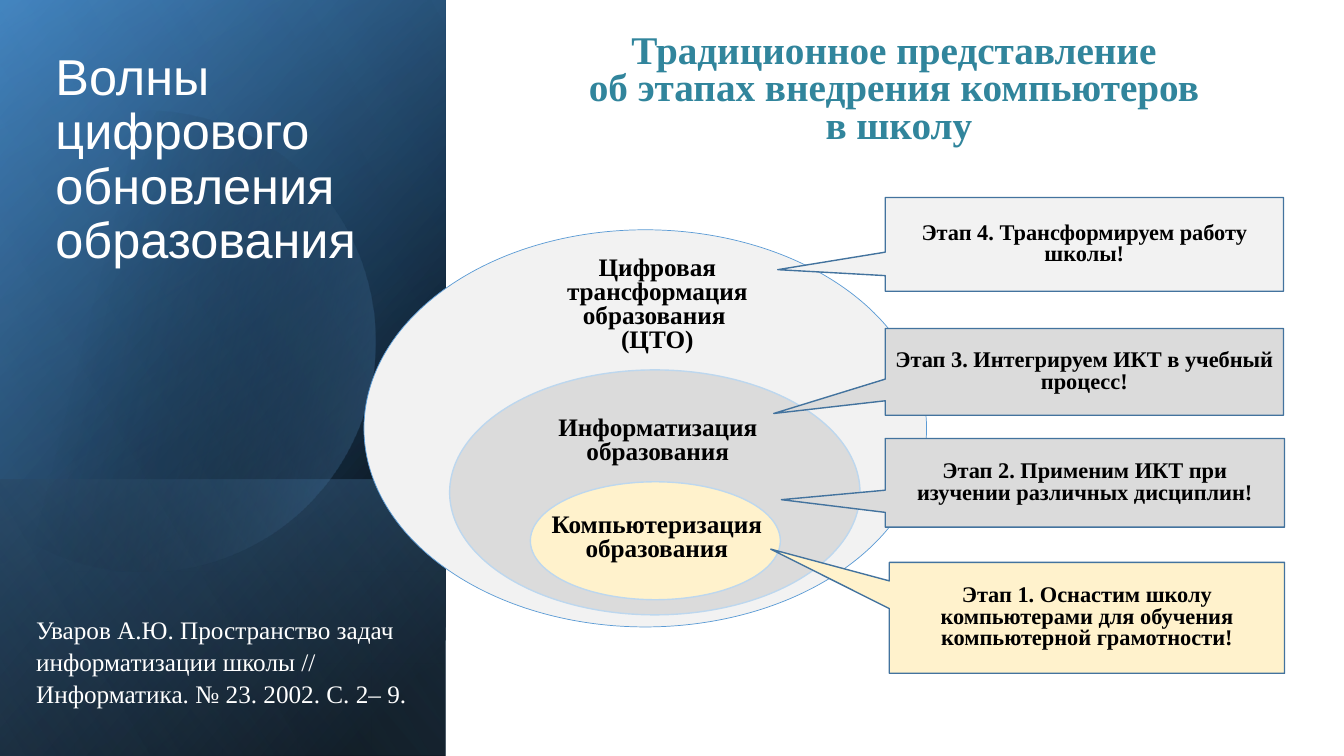
from lxml.etree import SubElement
from pptx import Presentation
from pptx.dml.color import RGBColor
from pptx.enum.shapes import MSO_SHAPE
from pptx.enum.text import MSO_ANCHOR, MSO_AUTO_SIZE, PP_ALIGN
from pptx.oxml.ns import qn
from pptx.util import Inches, Pt

WHITE = RGBColor(0xFF, 0xFF, 0xFF)
BLACK = RGBColor(0, 0, 0)
TEAL = RGBColor(0x31, 0x85, 0x9C)
LIGHT = RGBColor(0xF2, 0xF2, 0xF2)
GREY = RGBColor(0xDB, 0xDB, 0xDB)
CREAM = RGBColor(0xFF, 0xF2, 0xCC)
DEEP_BLUE = RGBColor(0x2E, 0x75, 0xB6)
BLUE = RGBColor(0x5B, 0x9B, 0xD5)
SOFT_BLUE = RGBColor(0x9D, 0xC3, 0xE6)
PALE_BLUE = RGBColor(0xBD, 0xD7, 0xEE)
CALLOUT_LINE = RGBColor(0x43, 0x73, 0x9E)

SERIF = "Times New Roman"
FULL_PANEL = (-1.54, 1.54, 7.5, 4.42)
LOWER_PANEL = (0.84, 3.92, 2.74, 4.42)

DISC_START = (1.49, 1.1)
DISC_CURVES = [
    [(2.46, 1.12), (3.35, 1.77), (3.63, 2.75)],
    [(3.98, 3.97), (3.28, 5.23), (2.07, 5.58)],
    [(1.31, 5.8), (0.53, 5.61), (-0.03, 5.14)],
    [(-0.15, 5.03)],
    [(-0.15, 1.75)],
    [(0, 1.61)],
    [(0.23, 1.42), (0.5, 1.28), (0.8, 1.19)],
    [(1.03, 1.13), (1.26, 1.1), (1.49, 1.1)],
]

RINGS = [
    ((3.61, 2.28, 5.58, 3.94), LIGHT, BLUE, 0.5,
     "Цифровая трансформация образования \v(ЦТО)", (5.02, 2.5, 3, 1.27)),
    ((4.46, 3.67, 4.07, 2.43), GREY, PALE_BLUE, 1,
     "Информатизация образования", (5.26, 4.09, 2.53, 0.69)),
    ((5.26, 4.78, 2.48, 1.17), CREAM, PALE_BLUE, 1,
     "Компьютеризация образования", (5.31, 5.05, 2.41, 0.87)),
]
STAGES = [
    ((8.82, 5.58, 3.92, 1.1), (-0.8, -0.62), CREAM,
     "Этап 1. Оснастим школу компьютерами для обучения компьютерной грамотности!"),
    ((8.78, 4.35, 3.96, 0.88), (-0.76, 0.19), GREY,
     "Этап 2. Применим ИКТ при изучении различных дисциплин!"),
    ((8.78, 3.26, 3.95, 0.86), (-0.78, 0.48), GREY,
     "Этап 3. Интегрируем ИКТ в учебный процесс!"),
    ((8.78, 1.96, 3.95, 0.93), (-0.77, 0.27), LIGHT,
     "Этап 4. Трансформируем работу школы!"),
]


def fill_gradient(sp, stops, angle):
    sp.fill.gradient()
    grad = sp._element.spPr.find(qn("a:gradFill"))
    grad.set("rotWithShape", "1")
    for child in list(grad):
        grad.remove(child)
    stop_list = SubElement(grad, qn("a:gsLst"))
    for position, color, opacity in stops:
        stop = SubElement(stop_list, qn("a:gs"), pos=str(position * 1000))
        srgb = SubElement(stop, qn("a:srgbClr"), val=str(color))
        if opacity < 100:
            SubElement(srgb, qn("a:alpha"), val=str(opacity * 1000))
    SubElement(grad, qn("a:lin"), ang=str(angle * 60000), scaled="0")
    sp.line.fill.background()
    sp.shadow.inherit = False


def add_solid(slide, kind, box, fill, line=None, width=1):
    sp = slide.shapes.add_shape(kind, *map(Inches, box))
    sp.fill.solid()
    sp.fill.fore_color.rgb = fill
    if line is None:
        sp.line.fill.background()
    else:
        sp.line.color.rgb = line
        sp.line.width = Pt(width)
    sp.shadow.inherit = False
    return sp


def write(tf, text, size, color, bold=True, font=SERIF, align=PP_ALIGN.CENTER,
          spacing=0.8, anchor=MSO_ANCHOR.TOP):
    tf.word_wrap = True
    tf.auto_size = MSO_AUTO_SIZE.NONE
    tf.vertical_anchor = anchor
    p = tf.paragraphs[0]
    p.text = text
    p.alignment = align
    p.line_spacing = spacing
    p.font.size = Pt(size)
    p.font.name = font
    p.font.bold = bold
    p.font.color.rgb = color


def add_text(slide, box, *args, **kwargs):
    sp = slide.shapes.add_textbox(*map(Inches, box))
    write(sp.text_frame, *args, **kwargs)


def add_panel(slide, box, stops, angle):
    sp = slide.shapes.add_shape(MSO_SHAPE.RECTANGLE, *map(Inches, box))
    sp.rotation = 90
    sp._element.spPr.find(qn("a:xfrm")).set("flipH", "1")
    fill_gradient(sp, stops, angle)


def add_disc(slide, stops, angle):
    builder = slide.shapes.build_freeform(*map(Inches, DISC_START))
    builder.add_line_segments([tuple(map(Inches, point))
                               for curve in DISC_CURVES for point in curve])
    sp = builder.convert_to_shape()
    lines = iter(list(sp._element.iter(qn("a:lnTo"))))
    for curve in DISC_CURVES:
        segments = [next(lines) for point in curve]
        if len(segments) == 3:
            outline = segments[0].getparent()
            bezier = SubElement(outline, qn("a:cubicBezTo"))
            outline.replace(segments[0], bezier)
            for segment in segments:
                bezier.append(segment[0])
            for segment in segments[1:]:
                outline.remove(segment)
    fill_gradient(sp, stops, angle)


def add_callout(slide, box, tip, fill, text):
    sp = add_solid(slide, MSO_SHAPE.RECTANGULAR_CALLOUT, box, fill, CALLOUT_LINE)
    sp.adjustments[0], sp.adjustments[1] = tip
    write(sp.text_frame, text, 16, BLACK, anchor=MSO_ANCHOR.MIDDLE)


def place_title(slide, box, text):
    title = slide.shapes.title
    title.left, title.top, title.width, title.height = map(Inches, box)
    write(title.text_frame, text, 36, WHITE, bold=False, font="Arial",
          align=PP_ALIGN.LEFT, spacing=0.9, anchor=MSO_ANCHOR.MIDDLE)
    slide.shapes._spTree.append(title._element)


def main():
    prs = Presentation()
    prs.slide_width = Inches(13.33)
    prs.slide_height = Inches(7.5)
    slide = prs.slides.add_slide(prs.slide_layouts[5])

    add_solid(slide, MSO_SHAPE.RECTANGLE, (0, 0, 13.33, 7.5), WHITE)
    add_panel(slide, FULL_PANEL, [(8, BLACK, 100), (100, DEEP_BLUE, 100)], 50)
    add_panel(slide, FULL_PANEL, [(0, BLACK, 0), (99, BLUE, 46)], 30)
    add_panel(slide, LOWER_PANEL, [(2, BLUE, 29), (100, BLACK, 30)], 130)
    add_disc(slide, [(29, BLACK, 0), (100, BLUE, 43)], 14)
    add_panel(slide, FULL_PANEL, [(0, BLACK, 0), (99, SOFT_BLUE, 11)], 120)

    for box, fill, line, width, text, text_box in RINGS:
        add_solid(slide, MSO_SHAPE.OVAL, box, fill, line, width)
        add_text(slide, text_box, text, 18, BLACK)
    for stage in STAGES:
        add_callout(slide, *stage)

    add_text(slide, (4.78, 0.29, 8.27, 1.24),
             "Традиционное представление \vоб этапах внедрения компьютеров \vв школу",
             28, TEAL)
    place_title(slide, (0.45, 0.25, 3.63, 2.69),
                "Волны цифрового обновления \vобразования")
    add_text(slide, (0.26, 6.02, 4.01, 1.07),
             "Уваров А.Ю. Пространство задач информатизации школы // "
             "Информатика. № 23. 2002. С. 2– 9.",
             18, WHITE, bold=False, align=PP_ALIGN.LEFT, spacing=1.07)
    prs.save("out.pptx")


if __name__ == "__main__":
    main()
